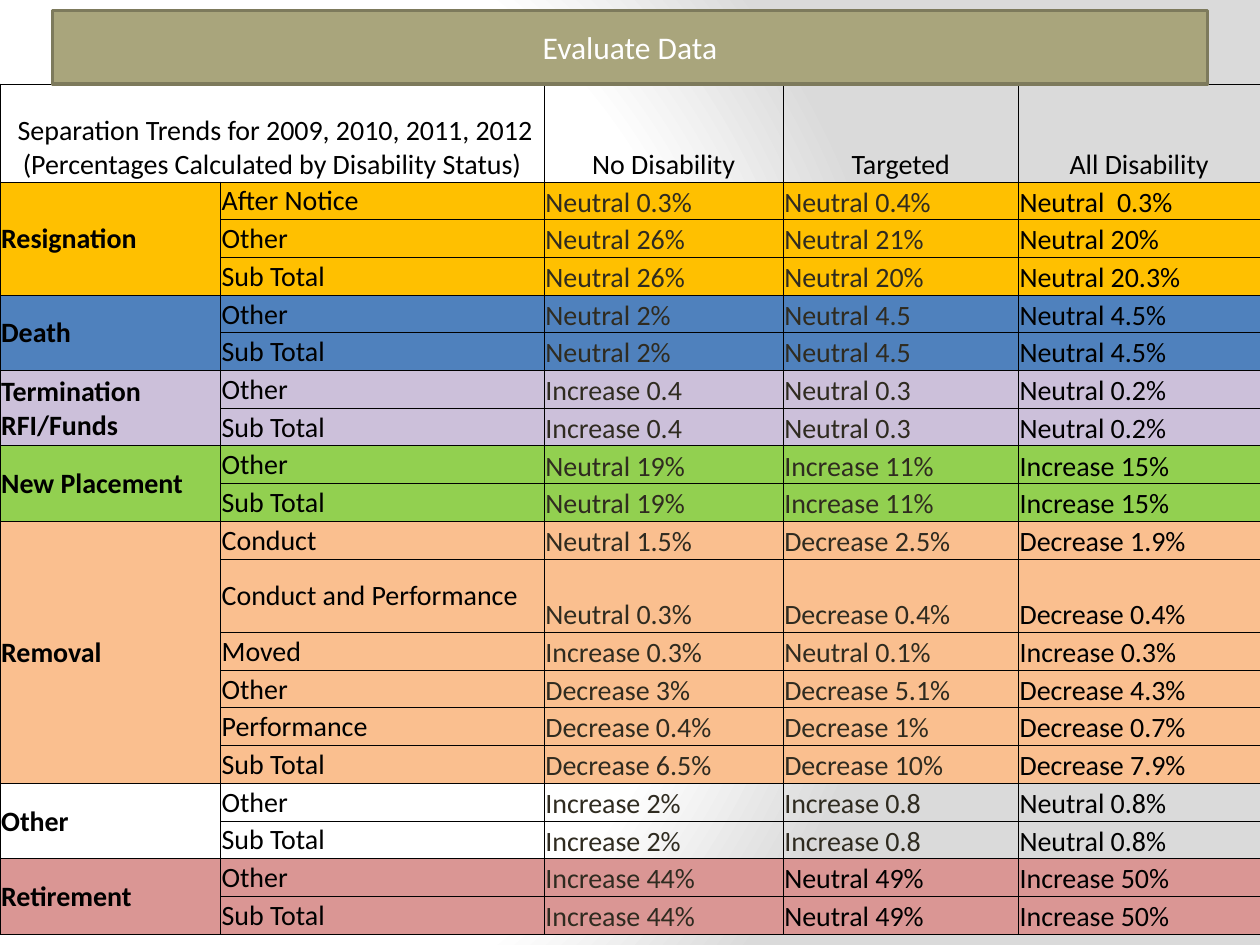
from pptx import Presentation
from pptx.dml.color import RGBColor
from pptx.enum.shapes import MSO_SHAPE
from pptx.enum.text import MSO_ANCHOR, PP_ALIGN
from pptx.oxml import parse_xml
from pptx.oxml.ns import nsdecls
from pptx.util import Pt

RECTANGLE = MSO_SHAPE.RECTANGLE
MIDDLE, BOTTOM = MSO_ANCHOR.MIDDLE, MSO_ANCHOR.BOTTOM
LEFT, CENTER = PP_ALIGN.LEFT, PP_ALIGN.CENTER

BLACK = RGBColor(0x00, 0x00, 0x00)
WHITE = RGBColor(0xFF, 0xFF, 0xFF)
CHARCOAL = RGBColor(0x2F, 0x2B, 0x20)
KHAKI = RGBColor(0xA9, 0xA5, 0x7C)
DARK_KHAKI = RGBColor(0x7D, 0x7A, 0x5C)
PALE_GRAY = RGBColor(0xDA, 0xDA, 0xDA)
AMBER = RGBColor(0xFF, 0xC0, 0x00)
BLUE = RGBColor(0x4F, 0x81, 0xBD)
LILAC = RGBColor(0xCC, 0xC0, 0xDA)
GREEN = RGBColor(0x92, 0xD0, 0x50)
PEACH = RGBColor(0xFA, 0xBF, 0x8F)
ROSE = RGBColor(0xDA, 0x96, 0x94)

FONT = "Calibri"
COLUMN_WIDTHS = [126, 185, 136.5, 134.5, 138]
HEADER_HEIGHT, ROW_HEIGHT, TALL_HEIGHT = 56, 21.55, 42
TALL_REASON = "Conduct and Performance"
HEADINGS = [
    " Separation Trends for 2009, 2010, 2011, 2012 (Percentages Calculated by Disability Status)",
    "", "No Disability", "Targeted", "All Disability",
]
MIXED = [CHARCOAL, CHARCOAL, BLACK]
MOSTLY_BLACK = [CHARCOAL, BLACK, BLACK]
SEPARATIONS = [
    ("Resignation", AMBER, MIXED, [
        ("After Notice", "Neutral 0.3%", "Neutral 0.4%", "Neutral  0.3%"),
        ("Other", "Neutral 26%", "Neutral 21%", "Neutral 20%"),
        ("Sub Total", "Neutral 26%", "Neutral 20%", "Neutral 20.3%"),
    ]),
    ("Death", BLUE, MIXED, [
        ("Other", "Neutral 2%", "Neutral 4.5", "Neutral 4.5%"),
        ("Sub Total", "Neutral 2%", "Neutral 4.5", "Neutral 4.5%"),
    ]),
    ("Termination RFI/Funds", LILAC, MIXED, [
        ("Other", "Increase 0.4", "Neutral 0.3", "Neutral 0.2%"),
        ("Sub Total", "Increase 0.4", "Neutral 0.3", "Neutral 0.2%"),
    ]),
    ("New Placement", GREEN, MIXED, [
        ("Other", "Neutral 19%", "Increase 11%", "Increase 15%"),
        ("Sub Total", "Neutral 19%", "Increase 11%", "Increase 15%"),
    ]),
    ("Removal", PEACH, MIXED, [
        ("Conduct", "Neutral 1.5%", "Decrease 2.5%", "Decrease 1.9%"),
        (TALL_REASON, "Neutral 0.3%", "Decrease 0.4%", "Decrease 0.4%"),
        ("Moved", "Increase 0.3%", "Neutral 0.1%", "Increase 0.3%"),
        ("Other", "Decrease 3%", "Decrease 5.1%", "Decrease 4.3%"),
        ("Performance", "Decrease 0.4%", "Decrease 1%", "Decrease 0.7%"),
        ("Sub Total", "Decrease 6.5%", "Decrease 10%", "Decrease 7.9%"),
    ]),
    ("Other", None, MIXED, [
        ("Other", "Increase 2%", "Increase 0.8", "Neutral 0.8%"),
        ("Sub Total", "Increase 2%", "Increase 0.8", "Neutral 0.8%"),
    ]),
    ("Retirement", ROSE, MOSTLY_BLACK, [
        ("Other", "Increase 44%", "Neutral 49%", "Increase 50%"),
        ("Sub Total", "Increase 44%", "Neutral 49%", "Increase 50%"),
    ]),
]


def write(frame, text, size=16, color=BLACK, bold=False, align=LEFT):
    """Put one formatted line of text into a text frame."""
    paragraph = frame.paragraphs[0]
    paragraph.alignment = align
    run = paragraph.add_run()
    run.text = text
    run.font.name = FONT
    run.font.size = Pt(size)
    run.font.bold = bold
    run.font.color.rgb = color


def paint_background(slide):
    """Fill the slide with a radial white to gray gradient."""
    stops = "".join(
        f'<a:gs pos="{position * 1000}"><a:srgbClr val="{color}"/></a:gs>'
        for position, color in [(0, WHITE), (75, WHITE), (100, PALE_GRAY)]
    )
    slide.element.cSld.insert(0, parse_xml(
        f'<p:bg {nsdecls("p", "a")}><p:bgPr><a:gradFill rotWithShape="1">'
        f'<a:gsLst>{stops}</a:gsLst><a:path path="circle">'
        '<a:fillToRect l="20000" t="50000" r="100000" b="50000"/></a:path>'
        '</a:gradFill><a:effectLst/></p:bgPr></p:bg>'
    ))


def add_title(slide, left, top, width, height):
    """Draw the title banner in the given box."""
    banner = slide.shapes.add_shape(RECTANGLE, Pt(left), Pt(top), Pt(width), Pt(height))
    banner.shadow.inherit = False
    banner.fill.solid()
    banner.fill.fore_color.rgb = KHAKI
    banner.line.color.rgb = DARK_KHAKI
    banner.line.width = Pt(2)
    banner.text_frame.vertical_anchor = MIDDLE
    write(banner.text_frame, "Evaluate Data", size=18, color=WHITE, align=CENTER)


def style_cell(cell, fill, anchor):
    """Set the margins, thin border, fill and anchor of a cell."""
    cell.margin_left = cell.margin_right = cell.margin_top = Pt(0.7)
    cell.margin_bottom = Pt(0)
    cell.vertical_anchor = anchor
    properties = cell._tc.get_or_add_tcPr()
    for side in "LRTB":
        properties.append(parse_xml(
            f'<a:ln{side} {nsdecls("a")} w="{Pt(0.5)}"><a:solidFill>'
            f'<a:srgbClr val="{BLACK}"/></a:solidFill></a:ln{side}>'
        ))
    if fill is None:
        cell.fill.background()
    else:
        cell.fill.solid()
        cell.fill.fore_color.rgb = fill


def add_separations(slide, left, top, width, height):
    """Draw the separation trends table in the given box."""
    reasons = [row[0] for group in SEPARATIONS for row in group[3]]
    table = slide.shapes.add_table(
        len(reasons) + 1, len(COLUMN_WIDTHS), Pt(left), Pt(top), Pt(width), Pt(height)
    ).table
    table.first_row = table.horz_banding = False
    for column, column_width in zip(table.columns, COLUMN_WIDTHS):
        column.width = Pt(column_width)
    table.rows[0].height = Pt(HEADER_HEIGHT)
    for index, reason in enumerate(reasons, 1):
        table.rows[index].height = Pt(TALL_HEIGHT if reason == TALL_REASON else ROW_HEIGHT)

    for column, heading in enumerate(HEADINGS):
        cell = table.cell(0, column)
        style_cell(cell, None, BOTTOM)
        if heading:
            write(cell.text_frame, heading, align=CENTER)
    table.cell(0, 0).merge(table.cell(0, 1))

    first = 1
    for category, fill, value_colors, rows in SEPARATIONS:
        for index, row in enumerate(rows, first):
            style_cell(table.cell(index, 0), fill, MIDDLE)
            for column, (text, color) in enumerate(zip(row, [BLACK] + value_colors), 1):
                cell = table.cell(index, column)
                style_cell(cell, fill, MIDDLE if column == 1 else BOTTOM)
                write(cell.text_frame, text, color=color)
        write(table.cell(first, 0).text_frame, category, bold=True)
        table.cell(first, 0).merge(table.cell(first + len(rows) - 1, 0))
        first += len(rows)


def main():
    """Build and save the slide."""
    presentation = Presentation()
    presentation.slide_width, presentation.slide_height = Pt(720), Pt(540)
    slide = presentation.slides.add_slide(presentation.slide_layouts[6])
    paint_background(slide)
    add_separations(slide, 0, 48, 720, 486)
    add_title(slide, 30, 6, 660, 42)
    presentation.save("out.pptx")


if __name__ == "__main__":
    main()
